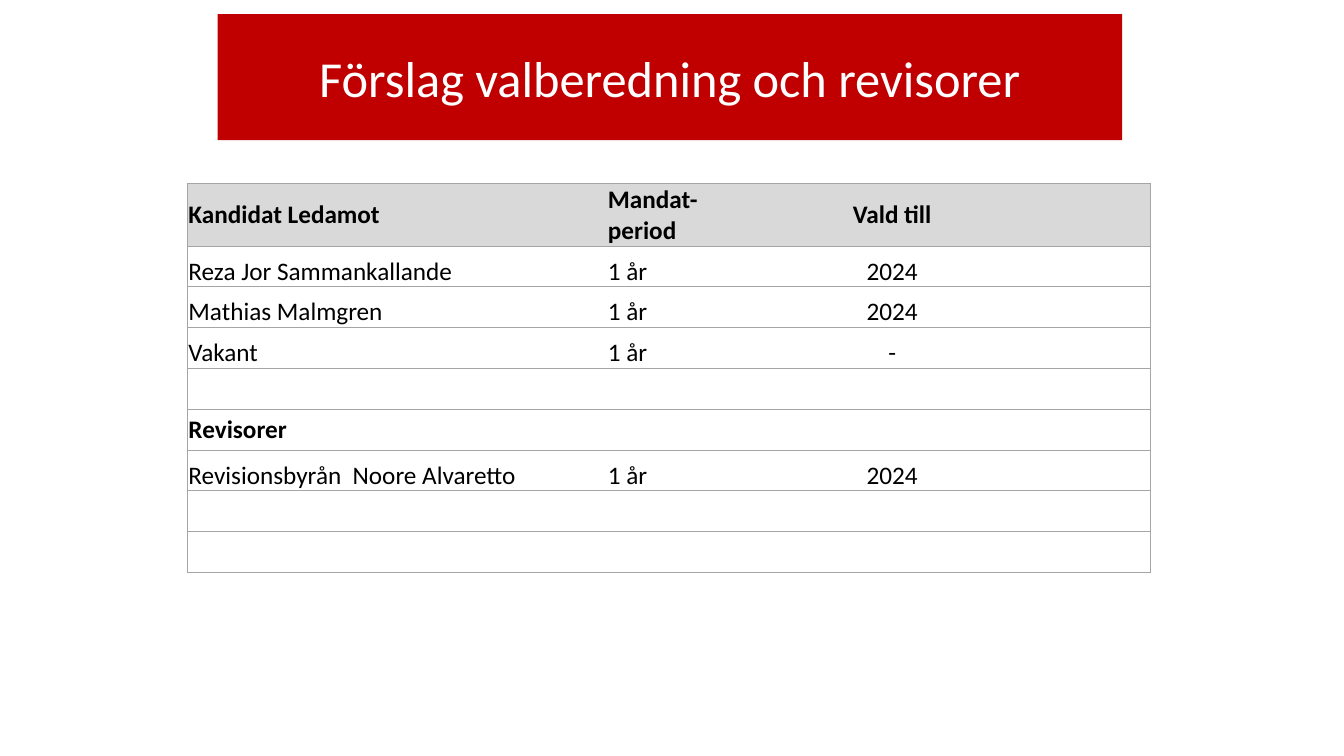
from lxml import etree
from pptx import Presentation
from pptx.dml.color import RGBColor
from pptx.enum.text import MSO_ANCHOR, MSO_AUTO_SIZE, PP_ALIGN
from pptx.oxml.ns import qn
from pptx.util import Inches, Pt

RED = RGBColor(0xC0, 0x00, 0x00)
WHITE = RGBColor(0xFF, 0xFF, 0xFF)
BLACK = RGBColor(0x00, 0x00, 0x00)
HEADER_GRAY = RGBColor(0xD9, 0xD9, 0xD9)
RULE_GRAY = RGBColor(0xA5, 0xA5, 0xA5)
LEFT, CENTER = PP_ALIGN.LEFT, PP_ALIGN.CENTER
MIDDLE, BOTTOM = MSO_ANCHOR.MIDDLE, MSO_ANCHOR.BOTTOM
NO_AUTOFIT = MSO_AUTO_SIZE.NONE
PLAIN_TABLE_STYLE = "{2D5ABB26-0587-4C30-8999-92F81FD0307C}"

HEADING = "Förslag valberedning och revisorer"
SECTION = "Revisorer"
ELECTIONS = [
    ("Kandidat Ledamot", "Mandat-\nperiod", "Vald till"),
    ("Reza Jor Sammankallande", "1 år", "2024"),
    ("Mathias Malmgren", "1 år", "2024"),
    ("Vakant", "1 år", "-"),
    (),
    (SECTION,),
    ("Revisionsbyrån  Noore Alvaretto", "1 år", "2024"),
    (),
    (),
]
COLUMN_SHARES = [31.21, 14.55, 13.35, 12.53]
ROW_SHARES = [8.27] + [5.4] * (len(ELECTIONS) - 1)
ALIGNMENTS = [LEFT, LEFT, CENTER, LEFT]


class SlideBuilder:
    font = "Calibri"
    title_size = Pt(36)
    body_size = Pt(18)
    rule_width = Pt(0.5)
    cell_inset = Inches(0.01)

    def __init__(self, deck):
        self.deck = deck
        self.slide = deck.slides.add_slide(deck.slide_layouts[5])

    def across(self, percent):
        return round(self.deck.slide_width * percent / 100)

    def down(self, percent):
        return round(self.deck.slide_height * percent / 100)

    def add_text(self, frame, text, size, color, bold=False, align=LEFT):
        paragraph = frame.paragraphs[0]
        paragraph.alignment = align
        for number, line in enumerate(text.split("\n")):
            if number:
                paragraph.add_line_break()
            run = paragraph.add_run()
            run.text = line
            run.font.name = self.font
            run.font.size = size
            run.font.bold = bold
            run.font.color.rgb = color

    def title(self, text, left, top, width, height):
        banner = self.slide.shapes.title
        banner.left, banner.top = self.across(left), self.down(top)
        banner.width, banner.height = self.across(width), self.down(height)
        banner.fill.solid()
        banner.fill.fore_color.rgb = RED
        frame = banner.text_frame
        frame.word_wrap = True
        frame.auto_size = NO_AUTOFIT
        frame.vertical_anchor = MIDDLE
        self.add_text(frame, text, self.title_size, WHITE, align=CENTER)

    def borders(self, cell, visible_sides):
        properties = cell._tc.get_or_add_tcPr()
        for side in "LRTB":
            line = etree.SubElement(properties, qn(f"a:ln{side}"), w=str(self.rule_width))
            if side in visible_sides:
                fill = etree.SubElement(line, qn("a:solidFill"))
                etree.SubElement(fill, qn("a:srgbClr"), val=str(RULE_GRAY))
            else:
                etree.SubElement(line, qn("a:noFill"))

    def cell(self, cell, text, is_header, is_bold, align, visible_sides):
        cell.margin_left = cell.margin_right = cell.margin_top = self.cell_inset
        cell.margin_bottom = 0
        cell.vertical_anchor = MIDDLE if is_bold else BOTTOM
        self.borders(cell, visible_sides)
        if is_header:
            cell.fill.solid()
            cell.fill.fore_color.rgb = HEADER_GRAY
        else:
            cell.fill.background()
        if text:
            self.add_text(cell.text_frame, text, self.body_size, BLACK, is_bold, align)

    def table(self, rows, left, top, column_shares, row_shares):
        table = self.slide.shapes.add_table(
            len(rows), len(column_shares), self.across(left), self.down(top),
            self.across(sum(column_shares)), self.down(sum(row_shares))).table
        table.first_row = table.horz_banding = False
        table._tbl.tblPr.find(qn("a:tableStyleId")).text = PLAIN_TABLE_STYLE
        for column, share in zip(table.columns, column_shares):
            column.width = self.across(share)
        for row, share in zip(table.rows, row_shares):
            row.height = self.down(share)
        last = len(column_shares) - 1
        for r, entries in enumerate(rows):
            is_header = r == 0
            is_bold = is_header or entries == (SECTION,)
            for c, align in enumerate(ALIGNMENTS):
                text = entries[c] if c < len(entries) else ""
                sides = "TB" + ("L" if c == 0 else "") + ("R" if c == last else "")
                self.cell(table.cell(r, c), text, is_header, is_bold, align, sides)


def main():
    deck = Presentation()
    deck.slide_width, deck.slide_height = Inches(13.33), Inches(7.5)
    builder = SlideBuilder(deck)
    builder.title(HEADING, 16.2, 1.87, 67.29, 16.67)
    builder.table(ELECTIONS, 13.95, 24.27, COLUMN_SHARES, ROW_SHARES)
    deck.save("out.pptx")


if __name__ == "__main__":
    main()
